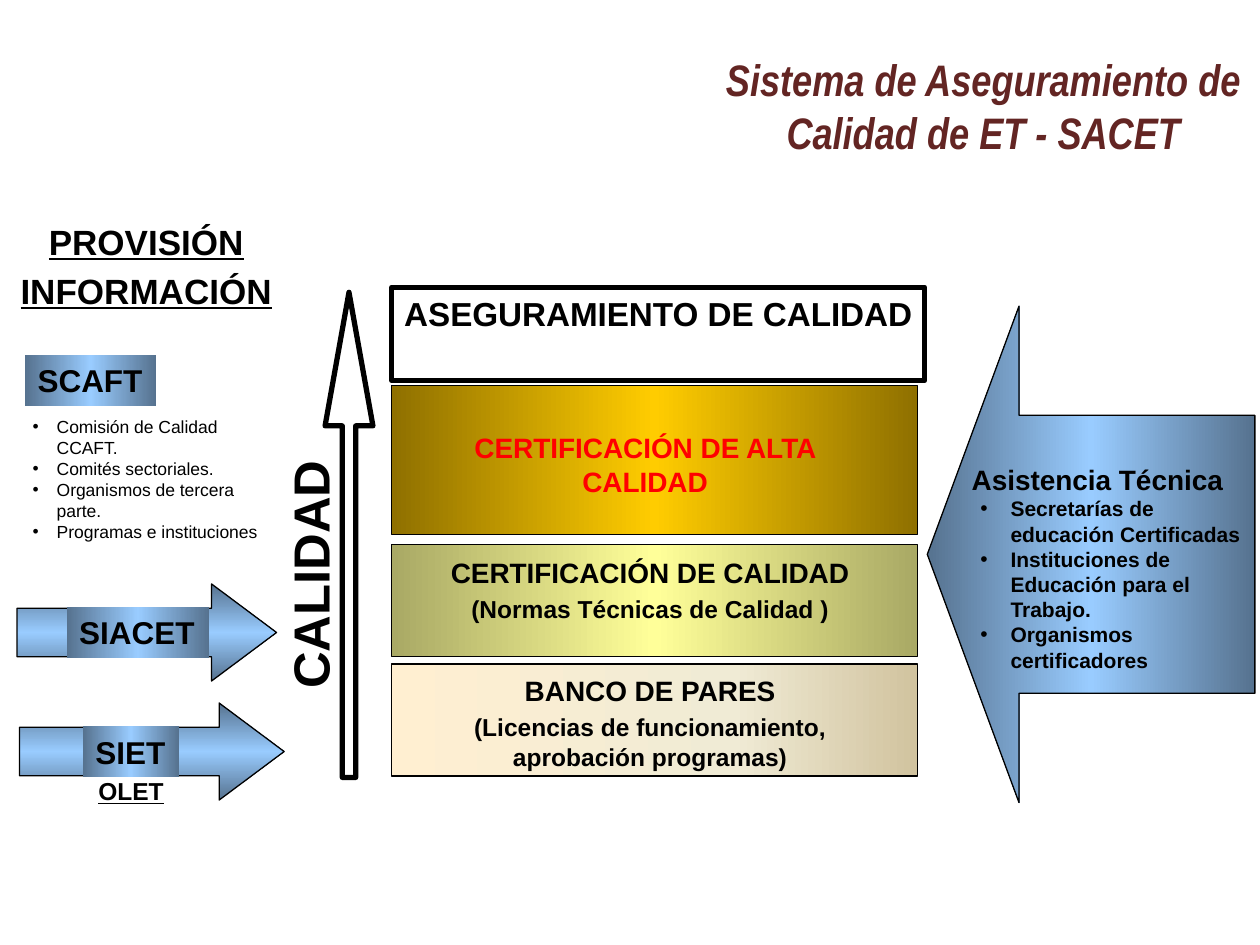
import dataclasses

import lxml.etree
import pptx
import pptx.dml.color
import pptx.enum.shapes
import pptx.enum.text
import pptx.oxml.ns
import pptx.util

COLORS = {
    "ink": "000000", "title": "632523", "alert": "FF0000",
    "steel": "56728F", "sky": "99CCFF", "olive": "A9A965", "lemon": "FFFF99",
    "bronze": "8F7000", "gold": "FFCC00",
    "cream": "FFEFD1", "ivory": "F0EBD5", "sand": "D1C39F",
}
BLUE = [(0, "steel"), (50, "sky"), (100, "steel")]
GREEN = [(0, "olive"), (50, "lemon"), (100, "olive")]
GOLD = [(0, "bronze"), (50, "gold"), (100, "bronze")]
BEIGE = [(0, "cream"), (65, "ivory"), (100, "sand")]

SHAPE = pptx.enum.shapes.MSO_SHAPE
ALIGN = pptx.enum.text.PP_ALIGN
ANCHOR = pptx.enum.text.MSO_ANCHOR
UNIT = pptx.util.Inches(0.1)


@dataclasses.dataclass
class Box:
    column: float
    row: float
    columns: float
    rows: float

    def area(self, column, row, columns, rows):
        return Box(self.column + column, self.row + row, columns, rows)


def assign(target, values):
    for name, value in values.items():
        setattr(target, name, value)


def place(shape, box):
    lengths = (box.column, box.row, box.columns, box.rows)
    names = ("left", "top", "width", "height")
    assign(shape, {name: int(UNIT * length) for name, length in zip(names, lengths)})


def add_xml(parent, tag, **attributes):
    return lxml.etree.SubElement(parent, pptx.oxml.ns.qn(tag), attributes)


def paint_gradient(shape, stops):
    shape.fill.gradient()
    shape.fill.gradient_angle = 0
    stop_list = shape._element.spPr.find(".//" + pptx.oxml.ns.qn("a:gsLst"))
    for stop in list(stop_list):
        stop_list.remove(stop)
    for percent, color in stops:
        stop = add_xml(stop_list, "a:gs", pos=str(percent * 1000))
        add_xml(stop, "a:srgbClr", val=COLORS[color])


def add_figure(slide, box, kind, stops=None, line=0.75, adjustments=(), rotation=0):
    shape = slide.shapes.add_shape(kind, 0, 0, 0, 0)
    place(shape, box)
    shape.rotation = rotation
    shape.shadow.inherit = False
    for index, value in enumerate(adjustments):
        shape.adjustments[index] = value
    if stops:
        paint_gradient(shape, stops)
    else:
        shape.fill.background()
    if line:
        shape.line.width = pptx.util.Pt(line)
        shape.line.color.rgb = pptx.dml.color.RGBColor.from_string(COLORS["ink"])
    else:
        shape.line.fill.background()
    return shape


def write(shape, lines, wrap=True, anchor=ANCHOR.TOP, align=ALIGN.CENTER, gap=0.2):
    frame = shape.text_frame
    assign(frame, {
        "word_wrap": wrap, "vertical_anchor": anchor,
        "auto_size": pptx.enum.text.MSO_AUTO_SIZE.NONE,
    })
    for index, (text, size, style) in enumerate(lines):
        style = {"name": "Arial", "bold": True, **style}
        color = style.pop("color", "ink")
        indent = style.pop("indent", None)
        paragraph = frame.add_paragraph() if index else frame.paragraphs[0]
        paragraph.alignment = ALIGN.LEFT if indent else align
        space = gap * size if index and not indent else 0
        paragraph.space_before = pptx.util.Pt(space)
        properties = paragraph._p.get_or_add_pPr()
        left, first = indent or (0, 0)
        properties.set("marL", str(pptx.util.Inches(left)))
        properties.set("indent", str(pptx.util.Inches(first)))
        if indent:
            add_xml(properties, "a:buFont", typeface="Arial")
            add_xml(properties, "a:buChar", char="•")
        else:
            add_xml(properties, "a:buNone")
        run = paragraph.add_run()
        run.text = text
        assign(run.font, {"size": pptx.util.Pt(size), **style})
        run.font.color.rgb = pptx.dml.color.RGBColor.from_string(COLORS[color])


def add_text(slide, box, lines, rotation=0):
    shape = slide.shapes.add_textbox(0, 0, 0, 0)
    place(shape, box)
    shape.rotation = rotation
    write(shape, lines)


def fill_placeholder(slide, index, box, lines, **options):
    shape = slide.placeholders[index]
    slide.shapes._spTree.append(shape._element)
    place(shape, box)
    write(shape, lines, **options)


def add_label(slide, box, text):
    shape = add_figure(slide, box, SHAPE.RECTANGLE, BLUE, line=0)
    write(shape, [(text, 18, {})], wrap=False, align=ALIGN.LEFT)


def add_system(slide, box, text, label_column, label_columns):
    upright = box.area((box.columns - box.rows) / 2, (box.rows - box.columns) / 2,
                       box.rows, box.columns)
    add_figure(slide, upright, SHAPE.UP_ARROW, BLUE,
               adjustments=(0.5, 0.67), rotation=90)
    add_label(slide, box.area(label_column, 1.85, label_columns, 4), text)


def add_information(slide, box):
    heading = {"underline": True}
    add_text(slide, box.area(0, 0, 23.2, 8.3),
             [("PROVISIÓN", 20, heading), ("INFORMACIÓN", 20, heading)])
    add_label(slide, box.area(2, 11.2, 10.4, 4), "SCAFT")
    members = ("Comisión de Calidad CCAFT.", "Comités sectoriales.",
               "Organismos de tercera parte.", "Programas e instituciones")
    item = {"bold": False, "indent": (0.19, -0.19)}
    fill_placeholder(slide, 1, box.area(1.6, 15.5, 21, 11.1),
                     [(text, 10, item) for text in members])
    add_system(slide, box.area(1.35, 29.35, 20.6, 7.7), "SIACET", 3.95, 11.3)
    add_system(slide, box.area(1.55, 38.8, 21, 7.7), "SIET", 5.05, 7.6)
    add_text(slide, box.area(-1.2, 44.1, 23.2, 3.4), [("OLET", 14, heading)])


def add_quality_axis(slide, box):
    add_text(slide, box.area(-20.5, 19.5, 43.7, 5.8), [("CALIDAD", 29, {})], rotation=270)
    add_figure(slide, box.area(2.6, 0, 3.8, box.rows), SHAPE.UP_ARROW, line=3,
               adjustments=(0.28, 2.79))


def add_levels(slide, box):
    header = add_figure(slide, box.area(0, 0, 42.3, 7.4), SHAPE.RECTANGLE, line=3)
    write(header, [("ASEGURAMIENTO DE CALIDAD", 19, {})], wrap=False)
    levels = [
        (7.8, 11.8, GOLD, (1.6, 3.1, 37),
         [("CERTIFICACIÓN DE ALTA CALIDAD", 16, {"color": "alert"})]),
        (20.4, 8.9, GREEN, (0.1, 0.4, 40.8),
         [("CERTIFICACIÓN DE CALIDAD", 16, {}),
          ("(Normas Técnicas de Calidad )", 14, {})]),
        (29.9, 8.9, BEIGE, (0.1, 0.3, 40.8),
         [("BANCO DE PARES", 16, {}),
          ("(Licencias de funcionamiento, aprobación programas)", 14, {})]),
    ]
    for row, rows, stops, (column, offset, columns), lines in levels:
        level = box.area(0, row, box.columns, rows)
        add_figure(slide, level, SHAPE.RECTANGLE, stops)
        add_text(slide, level.area(column, offset, columns, rows - offset), lines)


def add_assistance(slide, box):
    add_figure(slide, box, SHAPE.LEFT_ARROW, BLUE, adjustments=(0.56, 0.28))
    providers = ("Secretarías de educación Certificadas",
                 "Instituciones de Educación para el Trabajo.",
                 "Organismos certificadores")
    lines = [("Asistencia Técnica", 16, {})]
    lines += [(text, 12, {"indent": (0.5, -0.24)}) for text in providers]
    fill_placeholder(slide, 2, box.area(0.6, 11.9, 25.8, 20.9), lines)


def add_title(slide, box):
    style = {"name": "Arial Narrow", "italic": True, "color": "title"}
    fill_placeholder(slide, 0, box,
                     [("Sistema de Aseguramiento de Calidad de ET - SACET", 25.2, style)],
                     anchor=ANCHOR.MIDDLE)


def main():
    presentation = pptx.Presentation()
    assign(presentation, {"slide_width": UNIT * 100, "slide_height": UNIT * 75})
    slide = presentation.slides.add_slide(presentation.slide_layouts[3])
    add_title(slide, Box(56, 3.6, 44.1, 9.5))
    add_quality_axis(slide, Box(23.2, 23.2, 6.4, 38.5))
    add_levels(slide, Box(31.1, 22.8, 41.7, 38.8))
    add_information(slide, Box(0, 17, 23.2, 47.5))
    add_assistance(slide, Box(73.6, 24.3, 26, 39.4))
    presentation.save("out.pptx")


if __name__ == "__main__":
    main()
